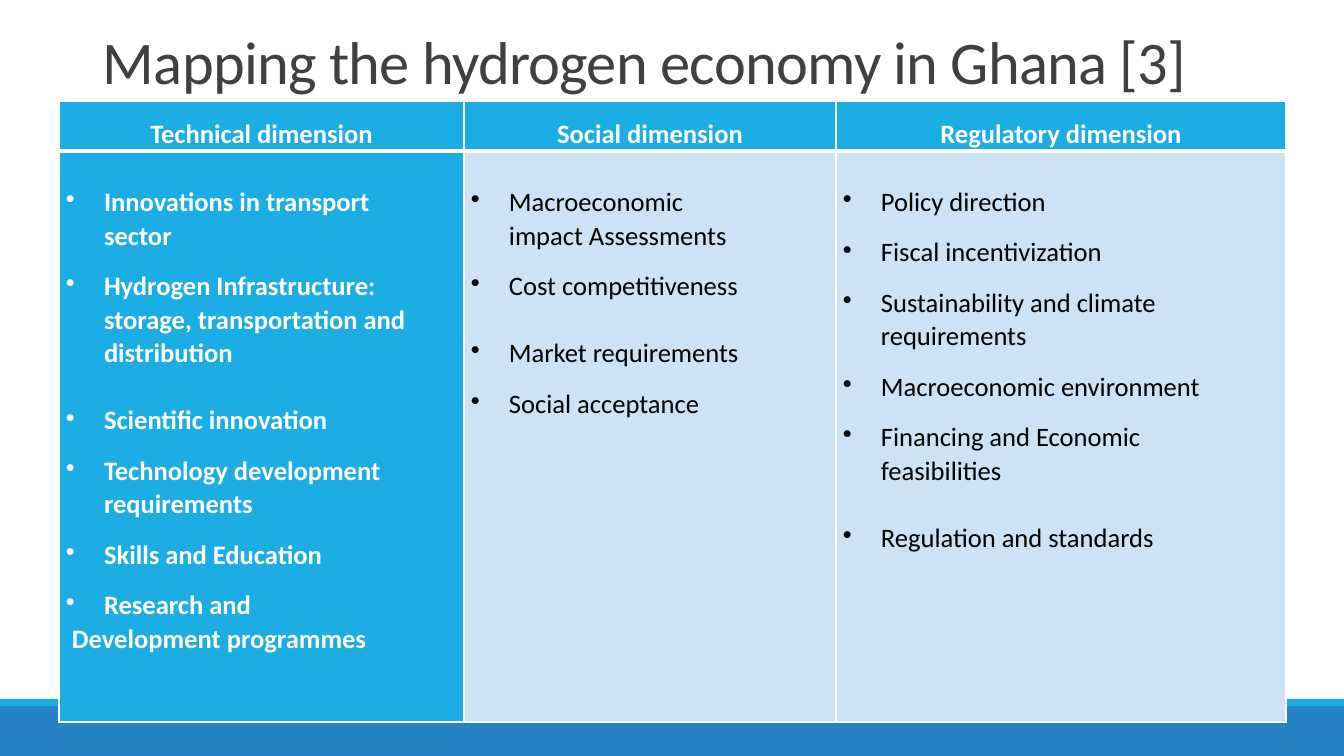
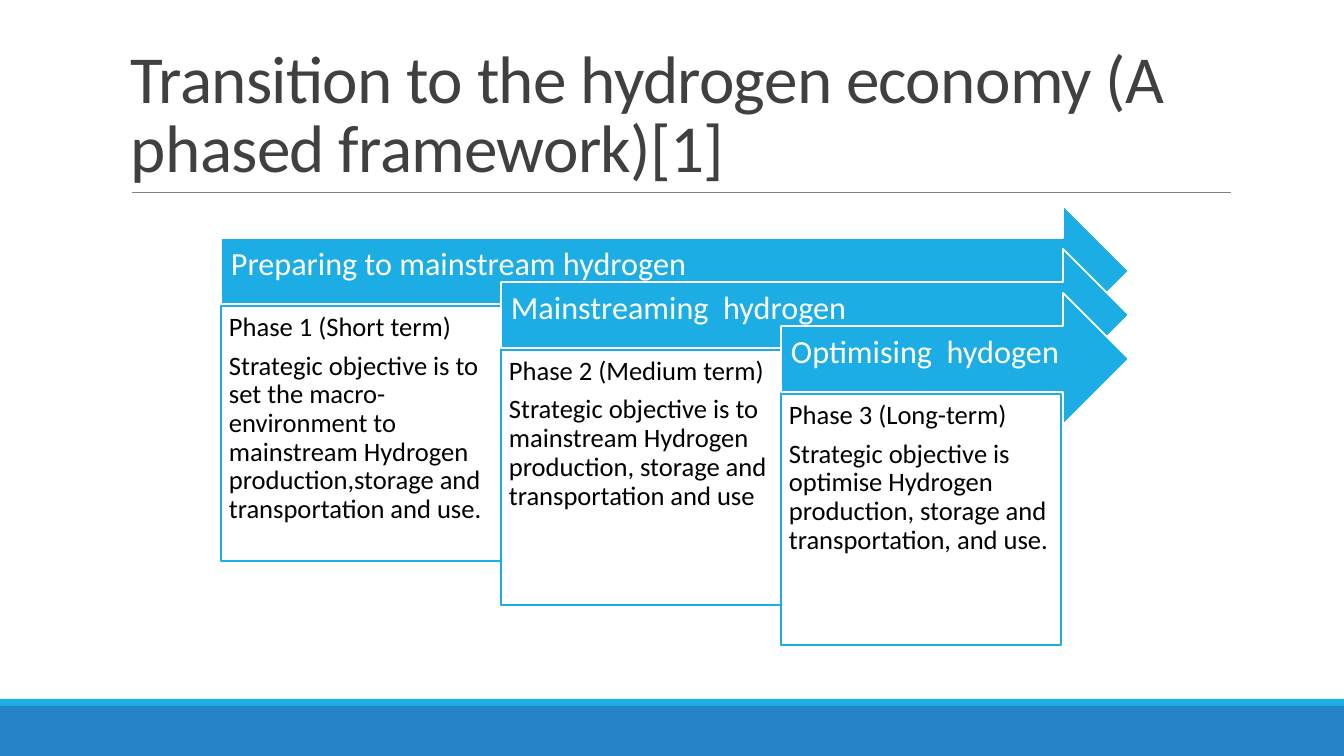
import dataclasses

import pptx
import pptx.dml.color
import pptx.enum.shapes
import pptx.enum.text
import pptx.oxml
import pptx.oxml.ns
import pptx.util

PX = 914400 / 100.8
WIDTH, HEIGHT = 1344, 756
SHAPE = pptx.enum.shapes.MSO_SHAPE
ANCHOR = pptx.enum.text.MSO_ANCHOR
ALIGN = pptx.enum.text.PP_ALIGN


@dataclasses.dataclass(frozen=True)
class Theme:
    font: str = "Calibri"
    band: str = "2683C6"
    accent: str = "1CADE4"
    pale: str = "CDE3F5"
    white: str = "FFFFFF"
    black: str = "000000"
    heading: str = "404040"
    rule: str = "808080"
    title: float = 48
    small_title: float = 43.2
    arrow: float = 23
    body: float = 19
    outline: float = 1.25
    body_line: float = 24
    item_gap: float = 12
    group_gap: float = 24


def px(*lengths):
    return [pptx.util.Emu(round(n * PX)) for n in lengths]


def rgb(color):
    return pptx.dml.color.RGBColor.from_string(color)


class Deck:
    def __init__(self, theme):
        self.theme = theme
        self.prs = pptx.Presentation()
        self.prs.slide_width, self.prs.slide_height = px(WIDTH, HEIGHT)
        self.s = None

    def slide(self):
        """Start a blank slide with the footer bands."""
        self.s = self.prs.slides.add_slide(self.prs.slide_layouts[6])
        self.shape(SHAPE.RECTANGLE, (0, 706, WIDTH, 50), self.theme.band)
        self.shape(SHAPE.RECTANGLE, (0, 699, WIDTH, 7), self.theme.accent)

    def shape(self, kind, box, fill, line=None):
        sp = self.s.shapes.add_shape(kind, *px(*box))
        sp.shadow.inherit = False
        sp.fill.solid()
        sp.fill.fore_color.rgb = rgb(fill)
        if line:
            sp.line.color.rgb = rgb(line)
            sp.line.width = pptx.util.Pt(self.theme.outline)
        else:
            sp.line.fill.background()
        return sp

    def frame(self, tf, insets, anchor):
        tf.word_wrap = True
        tf.vertical_anchor = anchor
        (tf.margin_left, tf.margin_top,
         tf.margin_right, tf.margin_bottom) = px(*insets)

    def para(self, tf, text, size, color, bold=False, align=ALIGN.LEFT,
             spacing=None, before=0, after=0):
        """Fill the empty first paragraph of tf, or add one after the last."""
        p = tf.paragraphs[0] if not tf.text else tf.add_paragraph()
        p.text = text
        p.alignment = align
        p.line_spacing = spacing
        p.space_before = pptx.util.Pt(before)
        p.space_after = pptx.util.Pt(after)
        for r in p.runs:
            r.font.name = self.theme.font
            r.font.size = pptx.util.Pt(size)
            r.font.bold = bold
            r.font.color.rgb = rgb(color)
        return p

    def title(self, text, box, size):
        tf = self.s.shapes.add_textbox(*px(*box)).text_frame
        self.frame(tf, (10, 5, 10, 5), ANCHOR.BOTTOM)
        p = self.para(tf, text, size, self.theme.heading, spacing=0.85)
        for r in p.runs:
            r.font._element.set("spc", "-50")

    def rule(self, left, right, y):
        line = self.s.shapes.add_connector(
            pptx.enum.shapes.MSO_CONNECTOR.STRAIGHT, *px(left, y, right, y))
        line.line.color.rgb = rgb(self.theme.rule)
        line.line.width = pptx.util.Pt(0.5)
        line._element.spPr.append(pptx.oxml.parse_xml(
            f"<a:effectLst {pptx.oxml.ns.nsdecls('a')}/>"))

    def table(self, left, top, widths, heights):
        table = self.s.shapes.add_table(
            len(heights), len(widths),
            *px(left, top, sum(widths), sum(heights))).table
        table.first_row = table.horz_banding = False
        for column, width in zip(table.columns, px(*widths)):
            column.width = width
        for row, height in zip(table.rows, px(*heights)):
            row.height = height
        return table

    def cell(self, cell, fill, top_inset, anchor, top_line, bottom_line):
        """Style one cell with white borders and return its text frame."""
        cell.fill.solid()
        cell.fill.fore_color.rgb = rgb(fill)
        cell.vertical_anchor = anchor
        (cell.margin_left, cell.margin_top,
         cell.margin_right, cell.margin_bottom) = px(7, top_inset, 7, 0)
        sides = (("L", 1), ("R", 1), ("T", top_line), ("B", bottom_line))
        for i, (side, points) in enumerate(sides):
            cell._tc.get_or_add_tcPr().insert(i, pptx.oxml.parse_xml(
                f'<a:ln{side} {pptx.oxml.ns.nsdecls("a")} w="{points * 12700}">'
                f'<a:solidFill><a:srgbClr val="{self.theme.white}"/></a:solidFill>'
                f'</a:ln{side}>'))
        return cell.text_frame

    def item(self, tf, text, color, bold, before, indent=38, bullet=True):
        t = self.theme
        p = self.para(tf, text, t.body, color, bold, before=before,
                      spacing=pptx.util.Pt(t.body_line))
        pPr = p._p.get_or_add_pPr()
        margin = px(indent)[0]
        pPr.set("marL", str(margin))
        if bullet:
            pPr.set("indent", str(-margin))
            pPr.append(pptx.oxml.parse_xml(
                f'<a:buChar {pptx.oxml.ns.nsdecls("a")} char="•"/>'))

    def groups(self, tf, groups, color, bold):
        """List the items, with a wider gap between groups."""
        t = self.theme
        for g, items in enumerate(groups):
            for i, text in enumerate(items):
                before = t.item_gap if i else t.group_gap if g else 0
                self.item(tf, text, color, bold, before)

    def arrow(self, text, box):
        t = self.theme
        sp = self.shape(SHAPE.RIGHT_ARROW, box, t.accent, t.white)
        self.frame(sp.text_frame, (10, 10, 28, 21), ANCHOR.MIDDLE)
        self.para(sp.text_frame, text, t.arrow, t.white, spacing=0.9)

    def phase(self, texts, box):
        t = self.theme
        sp = self.shape(SHAPE.RECTANGLE, box, t.white, t.accent)
        self.frame(sp.text_frame, (8, 8, 8, 8), ANCHOR.TOP)
        for text in texts:
            self.para(sp.text_frame, text, t.body, t.black,
                      spacing=0.9, after=0.35 * t.body)


DIMENSIONS = [
    ("Technical dimension", [
        ["Innovations in transport\nsector",
         "Hydrogen Infrastructure:\nstorage, transportation and\ndistribution"],
        ["Scientific innovation", "Technology development\nrequirements",
         "Skills and Education", "Research and"]]),
    ("Social dimension", [
        ["Macroeconomic\nimpact Assessments", "Cost competitiveness"],
        ["Market requirements", "Social acceptance"]]),
    ("Regulatory dimension", [
        ["Policy direction", "Fiscal incentivization",
         "Sustainability and climate\nrequirements",
         "Macroeconomic environment", "Financing and Economic\nfeasibilities"],
        ["Regulation and standards"]]),
]

PHASES = [
    ("Preparing to mainstream hydrogen", 255, "Phase 1 (Short term)",
     "Strategic objective is to set the macro-environment to mainstream "
     "Hydrogen production,storage and transportation and use."),
    ("Mainstreaming  hydrogen", 255, "Phase 2 (Medium term)",
     "Strategic objective is to mainstream Hydrogen production, storage and "
     "transportation and use"),
    ("Optimising  hydogen", 251, "Phase 3 (Long-term)",
     "Strategic objective is optimise Hydrogen production, storage and "
     "transportation, and use."),
]


def mapping_slide(deck):
    t = deck.theme
    deck.slide()
    deck.title("Mapping the hydrogen economy in Ghana [3]",
               (93, 0, 1159, 102), t.small_title)
    table = deck.table(59, 101, (405, 372, 450), (50, 571))
    for col, (name, groups) in enumerate(DIMENSIONS):
        first = col == 0
        head = deck.cell(table.cell(0, col), t.accent, 0, ANCHOR.BOTTOM, 1, 3)
        deck.para(head, name, t.body, t.white, True, ALIGN.CENTER)
        body = deck.cell(table.cell(1, col), t.accent if first else t.pale,
                         34, ANCHOR.TOP, 3, 1)
        deck.groups(body, groups, t.white if first else t.black, first)
    deck.item(table.cell(1, 0).text_frame, "Development programmes",
              t.white, True, 0, indent=6, bullet=False)


def transition_slide(deck):
    left, right, step, drop = 221, 1129, 280, 44
    deck.slide()
    deck.rule(132, 1231, 192)
    deck.title("Transition to the hydrogen economy (A phased framework)[1]",
               (121, 31, 1109, 160), deck.theme.title)
    for i, (heading, height, *texts) in enumerate(PHASES):
        x, y = left + i * step, 205 + i * drop
        deck.arrow(heading, (x, y, right - x, 132))
        deck.phase(texts, (x, y + 101, step, height))


def main():
    deck = Deck(Theme())
    mapping_slide(deck)
    transition_slide(deck)
    deck.prs.save("out.pptx")


if __name__ == "__main__":
    main()
